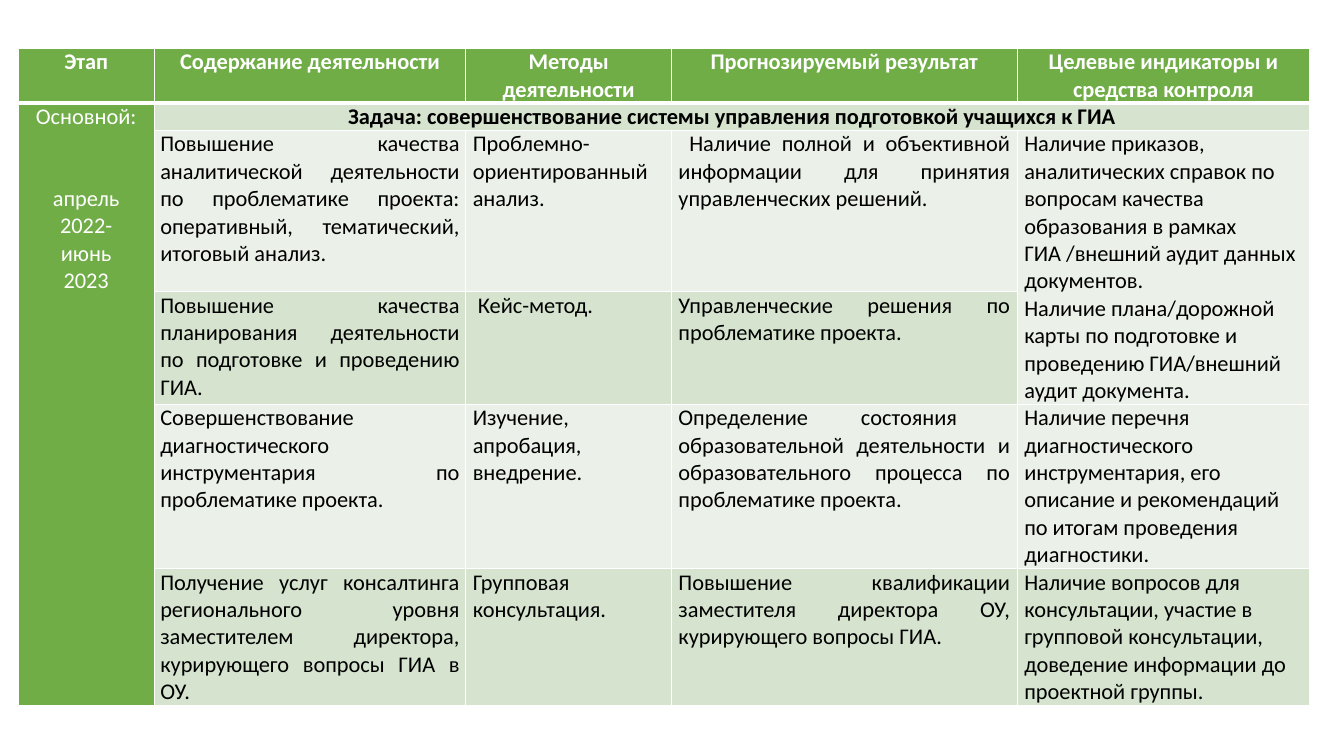
from lxml.etree import SubElement
from pptx import Presentation
from pptx.dml.color import RGBColor
from pptx.enum.text import PP_ALIGN
from pptx.oxml.ns import qn
from pptx.util import Inches, Pt

COLORS = {"head": "70AD47", "dark": "D5E3CF", "light": "EBF1E9",
          "white": "FFFFFF", "text": "000000"}
COLS = [1.35, 3.09, 2.04, 3.43, 2.9]
ROWS = [0.54, 0.27, 1.6, 1.11, 1.63, 1.36]
SPANS = [((1, 0), (5, 0)), ((1, 1), (1, 4)), ((2, 4), (3, 4))]

# One list per row; a cell is a text whose lines are paragraphs, None is merged.
DATA = [
    ["Этап", "Содержание деятельности", "Методы деятельности",
     "Прогнозируемый результат", "Целевые индикаторы и средства контроля"],
    ["Основной:\nапрель 2022-\nиюнь\n2023",
     "Задача: совершенствование системы управления подготовкой учащихся к ГИА",
     None, None, None],
    [None,
     "Повышение качества аналитической деятельности по проблематике проекта: "
     "оперативный, тематический, итоговый анализ.",
     "Проблемно-ориентированный анализ.",
     " Наличие полной и объективной информации для принятия управленческих решений.",
     "Наличие приказов, аналитических справок по вопросам качества образования "
     "в рамках ГИА /внешний аудит данных документов.\n"
     "Наличие плана/дорожной карты по подготовке и проведению ГИА/внешний аудит документа."],
    [None,
     "Повышение качества планирования деятельности по подготовке и проведению ГИА.",
     " Кейс-метод.",
     "Управленческие решения по проблематике проекта.",
     None],
    [None,
     "Совершенствование диагностического инструментария по проблематике проекта.",
     "Изучение, апробация, внедрение.",
     "Определение состояния  образовательной деятельности и образовательного "
     "процесса по проблематике проекта.",
     "Наличие перечня диагностического инструментария, его описание и рекомендаций "
     "по итогам проведения диагностики."],
    [None,
     "Получение услуг консалтинга регионального уровня заместителем директора, "
     "курирующего вопросы ГИА в ОУ.",
     "Групповая консультация.",
     "Повышение квалификации заместителя директора ОУ, курирующего вопросы ГИА.",
     "Наличие вопросов для консультации, участие в групповой консультации, "
     "доведение информации до проектной группы."],
]


def add_borders(cell, bottom):
    tcPr = cell._tc.get_or_add_tcPr()
    for side, width in (("L", 1), ("R", 1), ("T", 1), ("B", bottom)):
        ln = SubElement(tcPr, qn(f"a:ln{side}"), w=str(Pt(width)))
        SubElement(SubElement(ln, qn("a:solidFill")), qn("a:srgbClr"),
                   val=COLORS["white"])


prs = Presentation()
prs.slide_width, prs.slide_height = Inches(13.33), Inches(7.5)
s = prs.slides.add_slide(prs.slide_layouts[6])

table = s.shapes.add_table(len(ROWS), len(COLS), Inches(0.18), Inches(0.48),
                           Inches(sum(COLS)), Inches(sum(ROWS))).table
for column, width in zip(table.columns, COLS):
    column.width = Inches(width)
for row, height in zip(table.rows, ROWS):
    row.height = Inches(height)
for first, last in SPANS:
    table.cell(*first).merge(table.cell(*last))

for r, texts in enumerate(DATA):
    for c, text in enumerate(texts):
        cell = table.cell(r, c)
        add_borders(cell, 3 if r == 0 else 1)
        on_green = r == 0 or c == 0
        shade = "head" if on_green else "dark" if r % 2 else "light"
        cell.fill.solid()
        cell.fill.fore_color.rgb = RGBColor.from_string(COLORS[shade])
        cell.margin_left = cell.margin_right = Inches(0.06 if c == 1 and r > 1 else 0.07)
        cell.margin_top = cell.margin_bottom = 0
        if text is None:
            continue
        cell.text = text
        for p in cell.text_frame.paragraphs:
            if on_green or r == 1:
                p.alignment = PP_ALIGN.CENTER
            else:
                p.alignment = PP_ALIGN.LEFT if c == 4 else PP_ALIGN.JUSTIFY
            p.font.name, p.font.size = "Calibri", Pt(16)
            p.font.bold = r == 0 or (r == 1 and c == 1)
            p.font.color.rgb = RGBColor.from_string(
                COLORS["white" if on_green else "text"])

# The dates stand two lines below the name of the stage.
table.cell(1, 0).text_frame.paragraphs[1].space_before = Pt(39)

prs.save("out.pptx")
